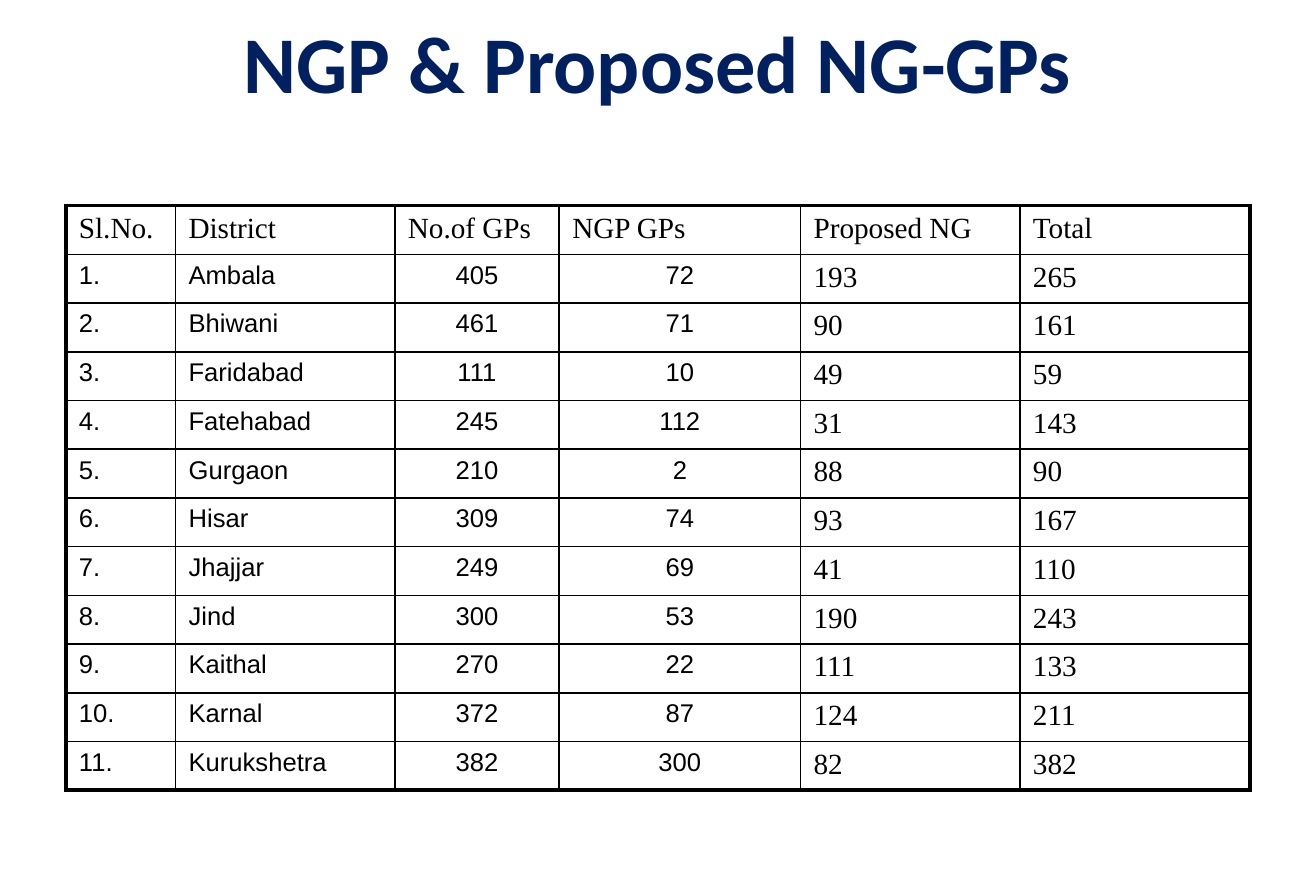
from dataclasses import dataclass

from lxml import etree
from pptx import Presentation
from pptx.dml.color import RGBColor
from pptx.enum.text import MSO_ANCHOR, PP_ALIGN
from pptx.oxml.ns import qn
from pptx.util import Pt

LEFT, CENTER = PP_ALIGN.LEFT, PP_ALIGN.CENTER
MIDDLE = MSO_ANCHOR.MIDDLE


@dataclass(frozen=True)
class Theme:
    navy: str = "002060"
    black: str = "000000"
    white: str = "FFFFFF"
    title_font: str = "Calibri"
    serif: str = "Times New Roman"
    sans: str = "Arial"
    title_size: float = 44
    serif_size: float = 16
    sans_size: float = 14
    outer_line: float = 2.25
    inner_line: float = 1


THEME = Theme()

HEADERS = ["Sl.No.", "District", "No.of GPs", "NGP GPs", "Proposed NG", "Total"]
COLUMN_WIDTHS = [60, 120, 90, 132, 120, 126]
CENTERED_COLUMNS = (2, 3)
SANS_COLUMNS = 4

# District, number of GPs, NGP GPs, proposed NG
DISTRICTS = [
    ("Ambala", 405, 72, 193),
    ("Bhiwani", 461, 71, 90),
    ("Faridabad", 111, 10, 49),
    ("Fatehabad", 245, 112, 31),
    ("Gurgaon", 210, 2, 88),
    ("Hisar", 309, 74, 93),
    ("Jhajjar", 249, 69, 41),
    ("Jind", 300, 53, 190),
    ("Kaithal", 270, 22, 111),
    ("Karnal", 372, 87, 124),
    ("Kurukshetra", 382, 300, 82),
]


def style_paragraph(p, font, size, color, align=LEFT, bold=False):
    p.alignment = align
    p.font.name = font
    p.font.size = Pt(size)
    p.font.bold = bold
    p.font.color.rgb = RGBColor.from_string(color)


def set_borders(cell, widths):
    """Draw solid borders; widths maps the sides L, R, T, B to points."""
    tc_pr = cell._tc.get_or_add_tcPr()
    for side, width in widths.items():
        ln = etree.SubElement(tc_pr, qn(f"a:ln{side}"), w=str(int(Pt(width))))
        fill = etree.SubElement(ln, qn("a:solidFill"))
        etree.SubElement(fill, qn("a:srgbClr"), val=THEME.black)


def add_title(s, text, left, top, width, height):
    tf = s.shapes.add_textbox(Pt(left), Pt(top), Pt(width), Pt(height)).text_frame
    tf.word_wrap = True
    tf.vertical_anchor = MIDDLE
    p = tf.paragraphs[0]
    p.text = text
    style_paragraph(p, THEME.title_font, THEME.title_size, THEME.navy, CENTER, True)


def add_district_table(s, left, top, width, height):
    rows = [HEADERS]
    for number, (district, gps, ngp, proposed) in enumerate(DISTRICTS, 1):
        rows.append([f"{number}.", district, gps, ngp, proposed, ngp + proposed])
    last_row, last_col = len(rows) - 1, len(HEADERS) - 1

    table = s.shapes.add_table(len(rows), len(HEADERS), Pt(left), Pt(top),
                               Pt(width), Pt(height)).table
    table.first_row = table.horz_banding = False
    for column, share in zip(table.columns, COLUMN_WIDTHS):
        column.width = Pt(width * share / sum(COLUMN_WIDTHS))
    for row in table.rows:
        row.height = Pt(height / len(rows))

    for i, values in enumerate(rows):
        for j, value in enumerate(values):
            cell = table.cell(i, j)
            sans = i > 0 and j < SANS_COLUMNS

            # Thick frame around a thin grid
            edges = {"L": j == 0, "R": j == last_col, "T": i == 0, "B": i == last_row}
            set_borders(cell, {side: THEME.outer_line if outer else THEME.inner_line
                               for side, outer in edges.items()})

            # Sans columns sit on white, the rest is unfilled
            if sans:
                cell.fill.solid()
                cell.fill.fore_color.rgb = RGBColor.from_string(THEME.white)
            else:
                cell.fill.background()

            p = cell.text_frame.paragraphs[0]
            p.text = str(value)
            style_paragraph(p, THEME.sans if sans else THEME.serif,
                            THEME.sans_size if sans else THEME.serif_size, THEME.black,
                            CENTER if sans and j in CENTERED_COLUMNS else LEFT)


def main():
    prs = Presentation()
    prs.slide_width, prs.slide_height = Pt(720), Pt(481.88)
    s = prs.slides.add_slide(prs.slide_layouts[6])
    add_title(s, "NGP & Proposed NG-GPs", 36, 0, 648, 67)
    add_district_table(s, 36, 112.5, 648, 320)
    prs.save("out.pptx")


if __name__ == "__main__":
    main()
